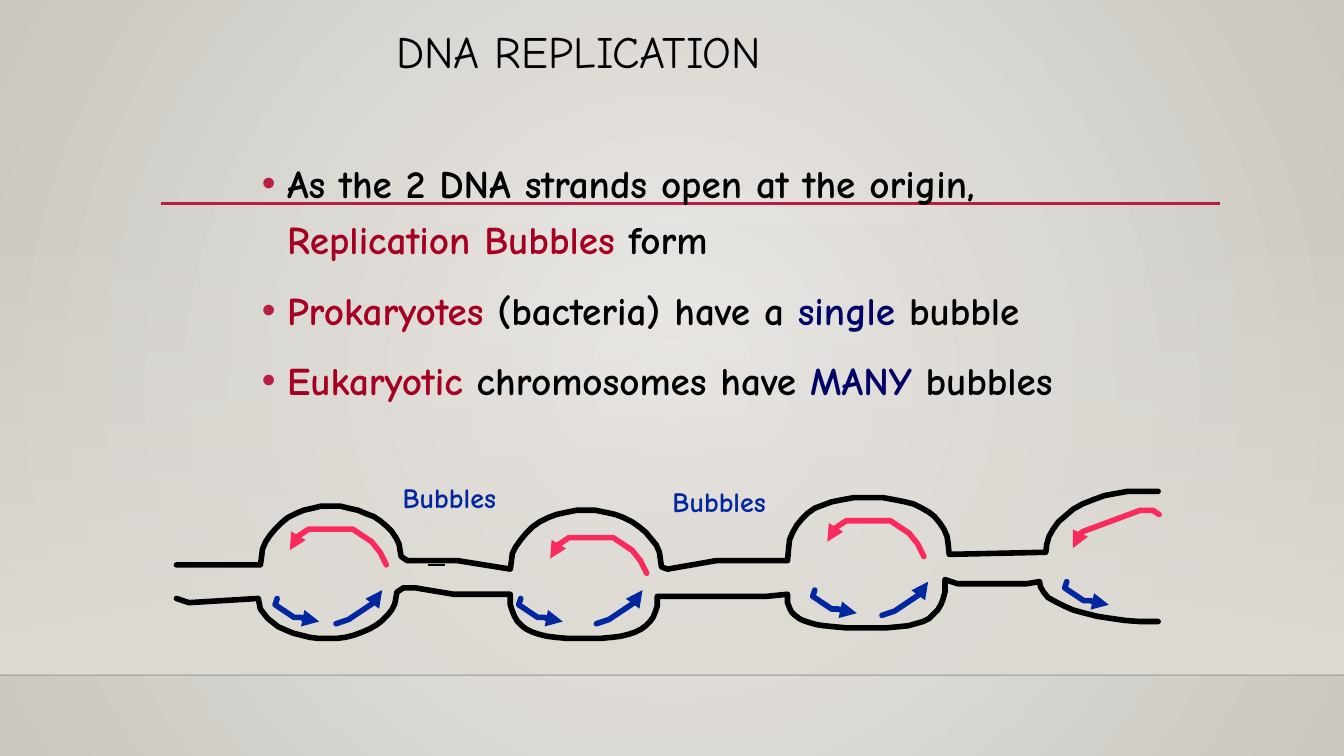
from math import cos, copysign, pi, sin

from lxml import etree
from pptx import Presentation
from pptx.dml.color import RGBColor
from pptx.enum.shapes import MSO_CONNECTOR, MSO_SHAPE
from pptx.enum.text import MSO_ANCHOR, MSO_AUTO_SIZE
from pptx.oxml.ns import qn
from pptx.util import Pt

PX = 9525  # EMU per px, 96 px to the inch
FONT = "Comic Neue"
STRAIGHT = MSO_CONNECTOR.STRAIGHT
RECTANGLE = MSO_SHAPE.RECTANGLE
TOP = MSO_ANCHOR.TOP
GROW = MSO_AUTO_SIZE.SHAPE_TO_FIT_TEXT

BLACK = RGBColor(0x00, 0x00, 0x00)
CRIMSON = RGBColor(0xB7, 0x1E, 0x42)
DARK_RED = RGBColor(0xA5, 0x00, 0x21)
NAVY = RGBColor(0x00, 0x00, 0x66)
BLUE = RGBColor(0x00, 0x27, 0x9F)
PINK = RGBColor(0xFA, 0x2B, 0x5C)
BG_CENTRE = RGBColor(0xEC, 0xEA, 0xE7)
BG_EDGE = RGBColor(0xCA, 0xC7, 0xC1)
FLOOR = RGBColor(0xDF, 0xDB, 0xD5)

# Closed stretches of each strand; one bubble opens after every stretch
TOP_LINKS = [
    [(168, 538), (248, 538)],
    [(382, 530), (388, 534), (436, 534), (486, 542)],
    [(630, 540), (636, 542), (682, 534), (750, 534)],
    [(904, 528), (996, 526)]]
BOTTOM_LINKS = [
    [(168, 570), (180, 574), (246, 570)],
    [(378, 564), (384, 560), (396, 560), (432, 566), (486, 566)],
    [(626, 568), (730, 568), (750, 566)],
    [(900, 552), (912, 556), (978, 556), (990, 554)]]

# Each bubble half: y of its extreme, and bulge (2 is an ellipse, more is squarer)
TOP_BUBBLES = [(482, 2), (486, 2), (474, 2.4), (468, 2)]
BOTTOM_BUBBLES = [(608, 2), (608, 2.8), (598, 3), (592, 2)]
TOP_OPEN_X, BOTTOM_OPEN_X = 1086, 1100  # middle of the last bubble, cut open there
STRAND_END = 1103
ARCH_STEPS = 24

# New-strand arrows: bends from the start, colour, and one start per bubble
LEADING_ARC = [(0, 0), (-6, -12), (-14, -22), (-32, -34), (-74, -34), (-86, -26), (-92, -14)]
CUT_ARC = [(0, 0), (-6, -4), (-18, -4), (-72, 16), (-78, 20), (-82, 32)]
LAGGING_HOOK = [(0, 0), (-2, 6), (16, 18), (22, 18), (34, 22), (40, 22)]
LAGGING_RISE = [(0, 0), (12, -4), (36, -20), (44, -32)]
ARROWS = [
    (LEADING_ARC, PINK, [(368, 538), (616, 546), (880, 530)]),
    (CUT_ARC, PINK, [(1104, 490)]),
    (LAGGING_HOOK, BLUE, [(264, 570), (496, 570), (776, 562), (1016, 554)]),
    (LAGGING_RISE, BLUE, [(320, 594), (568, 594), (840, 586)])]

BULLETS = [
    [("As the 2 DNA strands open at the origin, ", BLACK),
     ("Replication Bubbles", DARK_RED), (" form", BLACK)],
    [("Prokaryotes", DARK_RED), (" (bacteria) have a ", BLACK),
     ("single", NAVY), (" bubble", BLACK)],
    [("Eukaryotic", DARK_RED), (" chromosomes have ", BLACK),
     ("MANY", NAVY), (" bubbles", BLACK)]]


# Geometry of the strands
def arch(start, end, extreme, bulge):
    """Points of a superellipse half from start to end, reaching y = extreme."""
    (x1, y1), (x2, y2) = start, end
    points = []
    for step in range(1, ARCH_STEPS):
        angle = pi * step / ARCH_STEPS
        across = -copysign(abs(cos(angle)) ** (2 / bulge), cos(angle))
        share = (1 + across) / 2
        base = y1 + (y2 - y1) * share
        height = sin(angle) ** (2 / bulge)
        points.append((round(x1 + (x2 - x1) * share),
                       round(base + (extreme - base) * height)))
    return points


def strand(links, bubbles, open_x):
    """Join links by bubbles; the last bubble stops at its middle."""
    points = []
    for link, next_link, bubble in zip(links, links[1:], bubbles):
        points += link + arch(link[-1], next_link[0], *bubble)
    x, y = links[-1][-1]
    last_arch = arch((x, y), (2 * open_x - x, y), *bubbles[-1])
    points += links[-1] + last_arch[:ARCH_STEPS // 2]
    return points + [(STRAND_END, bubbles[-1][0])]


# Drawing helpers
def child(parent, tag, **attrs):
    return etree.SubElement(parent, qn(tag), **attrs)


def set_alpha(color_el, percent):
    child(color_el, "a:alpha", val=str(percent * 1000))


def set_gradient(fill, first, last):
    fill.gradient()
    for stop, color in zip(fill.gradient_stops, (first, last)):
        stop.color.rgb = color


def set_background(slide):
    set_gradient(slide.background.fill, BG_CENTRE, BG_EDGE)
    lin = next(slide.background._cSld.iter(qn("a:lin")))
    grad = lin.getparent()
    grad.remove(lin)
    circle = child(grad, "a:path")
    circle.set("path", "circle")
    child(circle, "a:fillToRect", l="50000", t="50000", r="50000", b="50000")


def add_band(slide, x, y, w, h):
    sp = slide.shapes.add_shape(RECTANGLE, x * PX, y * PX, w * PX, h * PX)
    sp.shadow.inherit = False
    sp.line.fill.background()
    set_gradient(sp.fill, FLOOR, FLOOR)
    sp.fill.gradient_angle = 270
    set_alpha(next(sp._element.spPr.iter(qn("a:srgbClr"))), 0)


def add_line(slide, x1, x2, y, color, width, opacity=100):
    line = slide.shapes.add_connector(STRAIGHT, x1 * PX, y * PX, x2 * PX, y * PX)
    line.line.color.rgb = color
    line.line.width = Pt(width)
    child(line._element.spPr, "a:effectLst")
    if opacity < 100:
        set_alpha(next(line._element.spPr.iter(qn("a:srgbClr"))), opacity)


def add_stroke(slide, points, color, arrow=False):
    builder = slide.shapes.build_freeform(*points[0], scale=PX)
    builder.add_line_segments(points[1:], close=False)
    sp = builder.convert_to_shape()
    sp.shadow.inherit = False
    sp.fill.background()
    sp.line.color.rgb = color
    sp.line.width = Pt(4)
    ln = sp.line._get_or_add_ln()
    ln.set("cap", "rnd")
    child(ln, "a:round")
    if arrow:
        child(ln, "a:tailEnd", type="triangle")


def add_run(p, text, size, color, bold):
    r = p.add_run()
    r.text = text
    r.font.name, r.font.size, r.font.bold = FONT, Pt(size), bold
    r.font.color.rgb = color


def add_text(slide, x, y, w, h, wrap=True):
    tf = slide.shapes.add_textbox(x * PX, y * PX, w * PX, h * PX).text_frame
    tf.word_wrap = wrap
    tf.vertical_anchor = TOP
    return tf


def add_bullets(slide, x, y, w, h):
    tf = add_text(slide, x, y, w, h)
    for i, runs in enumerate(BULLETS):
        p = tf.add_paragraph() if i else tf.paragraphs[0]
        p.line_spacing = 1.2
        p.space_before = Pt(10 if i else 0)
        pPr = p._p.get_or_add_pPr()
        pPr.set("marL", str(24 * PX))
        pPr.set("indent", str(-24 * PX))
        child(child(pPr, "a:buClr"), "a:srgbClr", val=str(CRIMSON))
        child(pPr, "a:buFont", typeface="Arial")
        child(pPr, "a:buChar", char="•")
        for text, color in runs:
            add_run(p, text, 28, color, True)


def main():
    prs = Presentation()
    prs.slide_width, prs.slide_height = 1280 * PX, 720 * PX
    slide = prs.slides.add_slide(prs.slide_layouts[6])

    # Backdrop and rules
    set_background(slide)
    add_band(slide, 0, 212, 1280, 431)
    add_line(slide, 0, 1280, 643, BLACK, 1, opacity=20)
    add_line(slide, 153, 1162, 194, CRIMSON, 2.5)

    # Title and bullets
    title = add_text(slide, 368, 24, 680, 112).paragraphs[0]
    title.line_spacing = 0.9
    add_run(title, "DNA REPLICATION", 32, BLACK, False)
    add_bullets(slide, 240, 138, 842, 496)

    # Strands with bubbles
    add_stroke(slide, strand(TOP_LINKS, TOP_BUBBLES, TOP_OPEN_X), BLACK)
    add_line(slide, 408, 424, 538, BLACK, 1)
    add_stroke(slide, strand(BOTTOM_LINKS, BOTTOM_BUBBLES, BOTTOM_OPEN_X), BLACK)

    # New strands growing inside the bubbles
    for bends, color, starts in ARROWS:
        for x, y in starts:
            add_stroke(slide, [(x + dx, y + dy) for dx, dy in bends], color, arrow=True)

    # Bubble labels
    for x, y in ((374, 453), (631, 457)):
        tf = add_text(slide, x, y, 118, 41, wrap=False)
        tf.auto_size = GROW
        add_run(tf.paragraphs[0], "Bubbles", 20, BLUE, True)

    prs.save("out.pptx")


if __name__ == "__main__":
    main()
